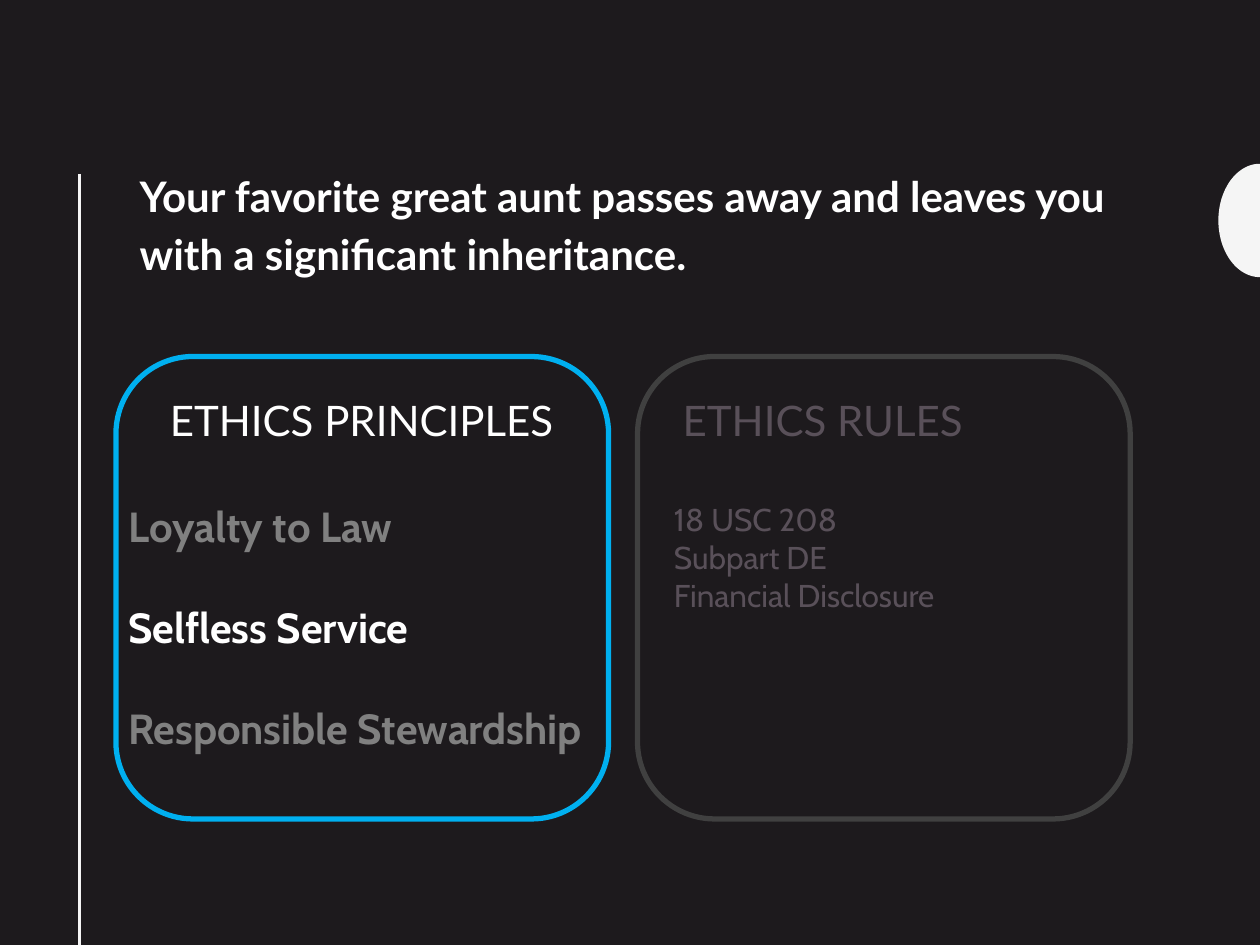
from dataclasses import dataclass
from math import cos, pi, sin

from lxml.etree import SubElement
from pptx import Presentation
from pptx.dml.color import RGBColor
from pptx.enum.shapes import MSO_CONNECTOR, MSO_SHAPE
from pptx.oxml.ns import qn
from pptx.util import Inches, Pt

COLORS = {
    "back": "1D1A1D", "light": "F5F5F5", "white": "FFFFFF", "blue": "00B0F0",
    "edge": "404040", "gray": "808080", "dim": "595059",
}


@dataclass
class Panel:
    left: float
    edge: str
    title: str
    title_left: float
    ink: str


PANELS = [
    Panel(0.92, "blue", "ETHICS PRINCIPLES", 1.25, "white"),
    Panel(5.06, "edge", "ETHICS RULES", 5.32, "dim"),
]


def color(name: str) -> RGBColor:
    return RGBColor.from_string(COLORS[name])


def add_text(slide, lines: list[tuple[str, str]], left: float, top: float,
             width: float, height: float, *, font: str = "Lato",
             size: float = 24, bold: bool = False, wrap: bool = True,
             gap: float = 0, pitch: float = 1.0) -> None:
    """Add a text box; each line is its wording and colour name."""
    box = slide.shapes.add_textbox(
        Inches(left), Inches(top), Inches(width), Inches(height))
    frame = box.text_frame
    frame.word_wrap = wrap
    for i, (words, ink) in enumerate(lines):
        para = frame.add_paragraph() if i else frame.paragraphs[0]
        para.line_spacing = pitch
        para.space_before = Pt(gap if i else 0)
        run = para.add_run()
        run.text = words
        run.font.name = font
        run.font.size = Pt(size)
        run.font.bold = bold
        run.font.color.rgb = color(ink)


def add_panel(slide, panel: Panel) -> None:
    add_text(slide, [(panel.title, panel.ink)], panel.title_left, 3.08, 3.61, 0.5)
    box = slide.shapes.add_shape(
        MSO_SHAPE.ROUNDED_RECTANGLE,
        Inches(panel.left), Inches(2.83), Inches(3.91), Inches(3.67))
    box.shadow.inherit = False
    box.fill.background()
    box.line.color.rgb = color(panel.edge)
    box.line.width = Pt(3)


def add_knob(slide, steps: int = 48) -> None:
    """Add the left half of an ellipse at the right slide edge."""
    turns = [pi * i / steps for i in range(steps + 1)]
    dots = [(Inches(10 - 0.33 * sin(t)), Inches(1.75 - 0.45 * cos(t)))
            for t in turns]
    path = slide.shapes.build_freeform(*dots[0])
    path.add_line_segments(dots[1:], close=True)
    knob = path.convert_to_shape()
    knob.shadow.inherit = False
    knob.fill.solid()
    knob.fill.fore_color.rgb = color("light")
    knob.line.fill.background()


def add_rule(slide) -> None:
    rule = slide.shapes.add_connector(
        MSO_CONNECTOR.STRAIGHT,
        Inches(0.63), Inches(1.38), Inches(0.63), Inches(7.5))
    rule.line.color.rgb = color("light")
    rule.line.width = Pt(2)
    SubElement(rule._element.spPr, qn("a:effectLst"))


def main() -> None:
    deck = Presentation()
    deck.slide_width, deck.slide_height = Inches(10), Inches(7.5)
    slide = deck.slides.add_slide(deck.slide_layouts[6])
    slide.background.fill.solid()
    slide.background.fill.fore_color.rgb = color("back")

    # Side decoration
    add_knob(slide)
    add_rule(slide)

    # Framed panels with headings
    for panel in PANELS:
        add_panel(slide, panel)

    # Panel contents
    add_text(slide, [("Loyalty to Law", "gray"), ("Selfless Service", "white"),
                     ("Responsible Stewardship", "gray")],
             0.92, 3.92, 3.84, 2.12, font="Cabin", bold=True, wrap=False, gap=29)
    rules = ["18 USC 208", "Subpart DE", "Financial Disclosure"]
    add_text(slide, [(rule, "dim") for rule in rules],
             5.25, 3.92, 4.83, 1.01, font="Cabin", size=18)

    # Scenario
    story = ["Your favorite great aunt passes away and leaves you",
             "with a significant inheritance."]
    add_text(slide, [(line, "white") for line in story],
             1.01, 1.25, 11.4, 1.81, bold=True, pitch=1.14)

    deck.save("out.pptx")


if __name__ == "__main__":
    main()
